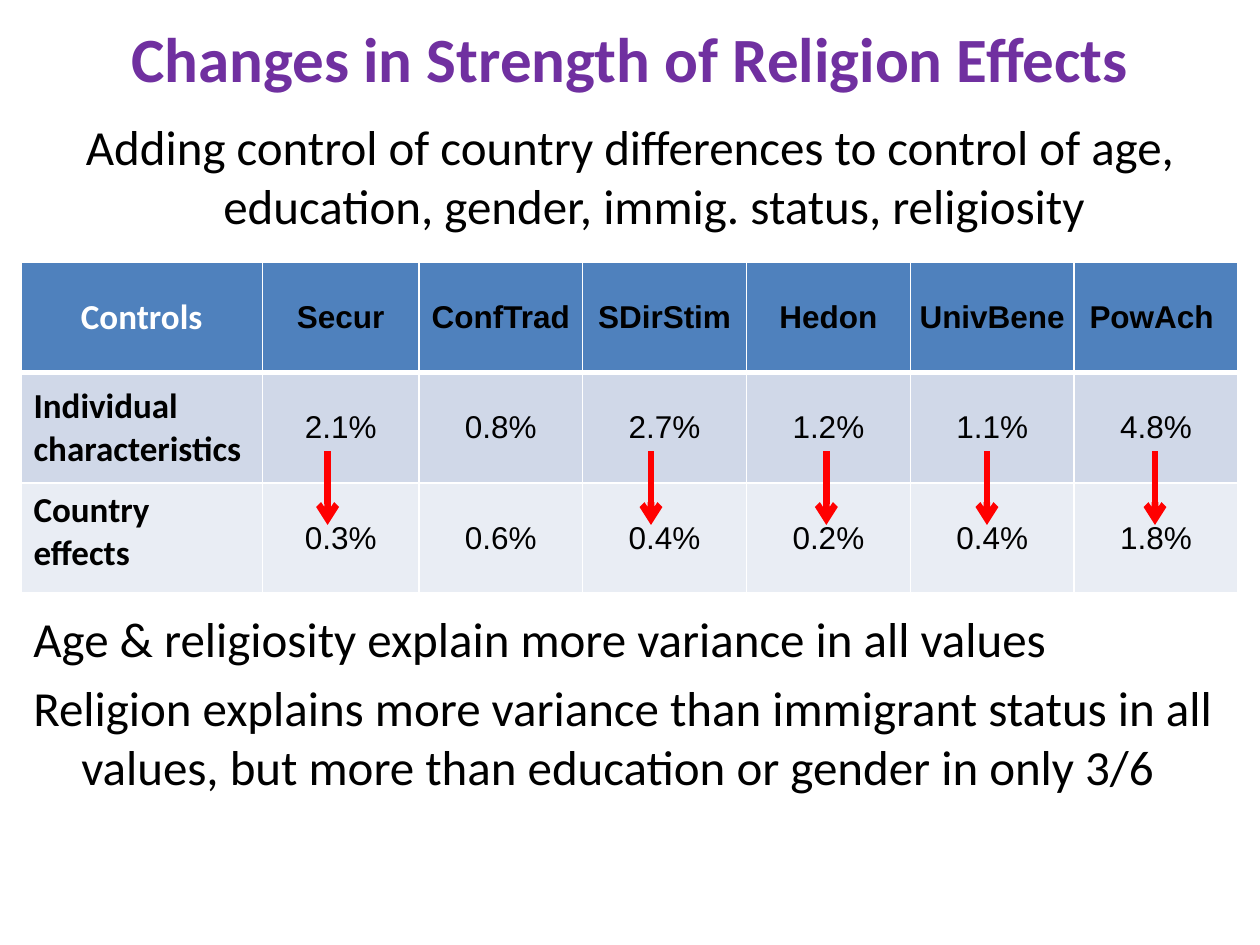
from dataclasses import dataclass

from lxml import etree
from pptx import Presentation
from pptx import util as u
from pptx.dml.color import RGBColor
from pptx.enum import shapes, text
from pptx.oxml import ns


@dataclass(frozen=True)
class Theme:
    heading: str = "7030A0"
    ink: str = "000000"
    paper: str = "FFFFFF"
    header: str = "4F81BD"
    bands: tuple = ("D0D8E8", "E9EDF4")
    arrow: str = "FF0000"
    text_font: str = "Calibri"
    data_font: str = "Arial"
    title_size: int = 36
    body_size: int = 28
    label_size: int = 20
    data_size: int = 18


THEME = Theme()
CENTER, LEFT = text.PP_ALIGN.CENTER, text.PP_ALIGN.LEFT
MIDDLE, TOP = text.MSO_ANCHOR.MIDDLE, text.MSO_ANCHOR.TOP
GRID = u.Inches(10) // 60


def cells(count):
    return round(count * GRID)


def write(frame, lines, size, font=THEME.text_font, color=THEME.ink,
          bold=False, align=LEFT, hanging=0, gap=0):
    for index, line in enumerate(lines):
        paragraph = frame.add_paragraph() if index else frame.paragraphs[0]
        paragraph.alignment = align
        paragraph.space_after = u.Pt(gap)
        if hanging:
            indent = u.Inches(hanging)
            properties = paragraph._p.get_or_add_pPr()
            properties.set("marL", str(indent))
            properties.set("indent", str(-indent))
        run = paragraph.add_run()
        run.text = line
        run.font.size, run.font.name, run.font.bold = u.Pt(size), font, bold
        run.font.color.rgb = RGBColor.from_string(color)


def border(cell, side, width):
    properties = cell._tc.get_or_add_tcPr()
    line = etree.SubElement(properties, ns.qn(f"a:{side}"), w=str(u.Pt(width)))
    fill = etree.SubElement(line, ns.qn("a:solidFill"))
    etree.SubElement(fill, ns.qn("a:srgbClr"), val=THEME.paper)


class Deck:
    def __init__(self, theme):
        self.theme = theme
        self.file = Presentation()
        self.file.slide_width, self.file.slide_height = cells(60), cells(45)
        self.slide = self.file.slides.add_slide(self.file.slide_layouts[6])

    def text(self, left, top, width, height, lines, anchor=TOP, **style):
        frame = self.slide.shapes.add_textbox(
            *map(cells, (left, top, width, height))).text_frame
        frame.word_wrap = True
        frame.vertical_anchor = anchor
        write(frame, lines, **style)

    def table(self, left, top, widths, row_height, rows):
        grid = self.slide.shapes.add_table(
            len(rows), len(widths), cells(left), cells(top),
            cells(sum(widths)), cells(row_height * len(rows))).table
        for column, width in zip(grid.columns, widths):
            column.width = cells(width)
        for r, row in enumerate(rows):
            grid.rows[r].height = cells(row_height)
            for c, value in enumerate(row):
                self.cell(grid.cell(r, c), r, c, value)

    def cell(self, cell, r, c, value):
        theme, is_header, is_label = self.theme, r == 0, c == 0
        cell.vertical_anchor = TOP if is_label and r == 2 else MIDDLE
        if is_label:
            write(cell.text_frame, value.split("\n"), theme.label_size,
                  bold=True, align=CENTER if is_header else LEFT,
                  color=theme.paper if is_header else theme.ink)
        else:
            cell.margin_left = cell.margin_right = 0
            cell.margin_top = cell.margin_bottom = 0
            write(cell.text_frame, [value], theme.data_size,
                  font=theme.data_font, bold=is_header, align=CENTER)
        for side, width in (("lnL", 1), ("lnR", 1),
                            ("lnT", 3 if r == 1 else 1),
                            ("lnB", 3 if is_header else 1)):
            border(cell, side, width)
        cell.fill.solid()
        cell.fill.fore_color.rgb = RGBColor.from_string(
            theme.header if is_header else theme.bands[r - 1])

    def down_arrow(self, column, top, bottom):
        arrow = self.slide.shapes.add_connector(
            shapes.MSO_CONNECTOR.STRAIGHT,
            *map(cells, (column, top, column, bottom)))
        arrow.line.width = u.Pt(3.75)
        arrow.line.color.rgb = RGBColor.from_string(self.theme.arrow)
        etree.SubElement(arrow.line._get_or_add_ln(), ns.qn("a:tailEnd"),
                         type="arrow")
        etree.SubElement(arrow._element.spPr, ns.qn("a:effectLst"))


def main():
    deck = Deck(THEME)
    deck.text(3, -1, 54, 7.5, ["Changes in Strength of Religion Effects"],
              anchor=MIDDLE, size=THEME.title_size, color=THEME.heading,
              bold=True, align=CENTER)
    body = dict(size=THEME.body_size, hanging=0.38, gap=5.6)
    deck.text(1, 5.25, 58, 7, [
        "Adding control of country differences to control of age, "
        "education, gender, immig. status, religiosity"],
        align=CENTER, **body)
    deck.text(1, 28.7, 58, 10.3, [
        "Age & religiosity explain more variance in all values",
        "Religion explains more variance than immigrant status in all "
        "values, but more than education or gender in only 3/6"], **body)
    deck.table(1, 12.5, [11.5, 7.45] + [7.8] * 5, 5.25, [
        ["Controls", "Secur", "ConfTrad", "SDirStim", "Hedon", "UnivBene",
         "PowAch "],
        ["Individual\ncharacteristics", "2.1%", "0.8%", "2.7%", "1.2%",
         "1.1%", "4.8%"],
        ["Country effects", "0.3%", "0.6%", "0.4%", "0.2%", "0.4%", "1.8%"],
    ])
    for column in (15.6, 31, 39.35, 47, 55):
        deck.down_arrow(column, 21.5, 25)
    deck.file.save("out.pptx")


if __name__ == "__main__":
    main()
